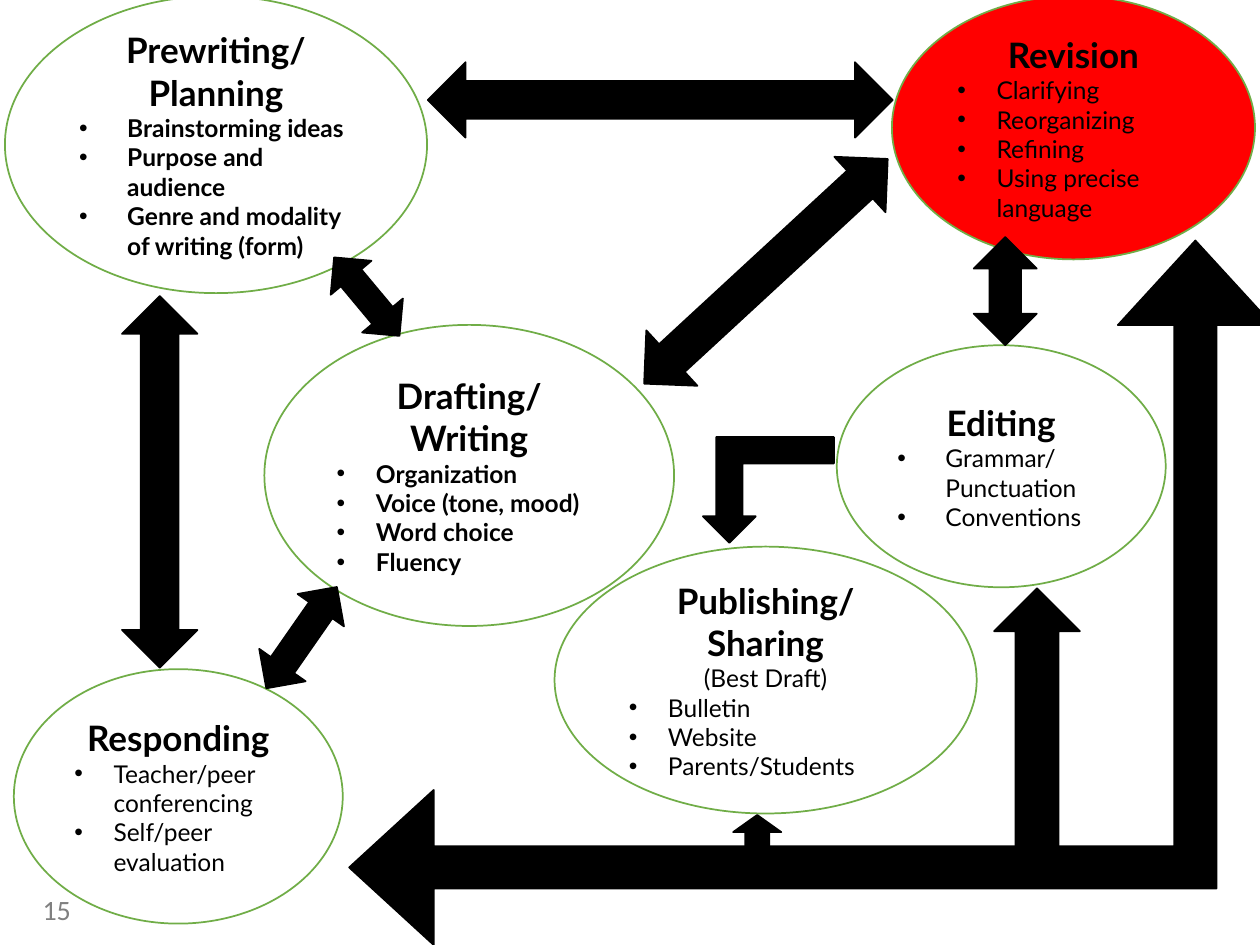
from lxml.etree import SubElement
from pptx import Presentation
from pptx.dml.color import RGBColor
from pptx.enum.shapes import MSO_SHAPE as Shape
from pptx.enum.text import MSO_ANCHOR as Anchor, PP_ALIGN as Align
from pptx.oxml.ns import qn
from pptx.util import Cm, Pt

THEME = {
    "font": "Lato", "number_font": "Calibri",
    "heading": 20, "body": 14, "number": 16, "line": 1,
    "text": "000000", "muted": "808080", "arrow": "000000",
    "plain": "FFFFFF", "current": "FF0000", "outline": "70AD47",
}

# Stages: box in cm, fill, bullet indent in cm, bold body, headings, note, bullets
STAGES = [
    ((0.1, -0.08, 8.51, 5.99), "plain", 0.97, True, ["Prewriting/", "Planning"], [],
     ["Brainstorming ideas", "Purpose and audience",
      "Genre and modality of writing (form)"]),
    ((5.33, 6.55, 8.26, 6.07), "plain", 0.79, True, ["Drafting/", "Writing"], [],
     ["Organization", "Voice (tone, mood)", "Word choice", "Fluency"]),
    ((16.87, 6.96, 6.63, 4.88), "plain", 0.97, False, ["Editing"], [],
     ["Grammar/ Punctuation", "Conventions"]),
    ((0.28, 13.49, 6.63, 5.13), "plain", 0.79, False, ["Responding"], [],
     ["Teacher/peer conferencing", "Self/peer evaluation"]),
    ((17.98, -0.08, 7.32, 5.31), "current", 0.79, False, ["Revision"], [],
     ["Clarifying", "Reorganizing", "Refining", "Using precise language"]),
    ((11.18, 11.02, 8.51, 5.38), "plain", 0.79, False, ["Publishing/ Sharing"],
     ["(Best Draft)"], ["Bulletin", "Website", "Parents/Students"]),
]

# Arrows: preset, box in cm before turning, rotation in degrees, adjustments
HALVES = (0.5, 0.5)
ARROWS = [
    (Shape.UP_DOWN_ARROW, (14.68, 2.13, 1.52, 6.68), 47.3, HALVES),
    (Shape.UP_DOWN_ARROW, (12.55, -2.67, 1.52, 9.37), 90, HALVES),
    (Shape.UP_DOWN_ARROW, (2.46, 5.97, 1.52, 7.49), 0, HALVES),
    (Shape.UP_DOWN_ARROW, (6.86, 4.95, 1.07, 2.06), 320.2, HALVES),
    (Shape.UP_DOWN_ARROW, (5.51, 11.61, 1.14, 2.49), 34.9, HALVES),
    (Shape.UP_DOWN_ARROW, (19.63, 4.78, 1.27, 2.18), 0, HALVES),
    (Shape.LEFT_UP_ARROW, (7.04, 4.85, 18.62, 14.2), 0, (0.06, 0.11, 0.12)),
    (Shape.BENT_UP_ARROW, (14.17, 8.81, 2.64, 2.13), 180, (0.25, 0.25, 0.25)),
    (Shape.UP_ARROW, (20.04, 11.86, 1.73, 5.77), 0, HALVES),
    (Shape.UP_ARROW, (14.78, 16.43, 0.97, 0.69), 0, HALVES),
]

PAGE_NUMBER = ("15", (0.61, 17.86, 5.72, 1.02))


def colour(name):
    return RGBColor.from_string(THEME[name])


def add_shape(page, preset, box, fill, line):
    shape = page.shapes.add_shape(preset, *map(Cm, box))
    shape.shadow.inherit = False
    shape.fill.solid()
    shape.fill.fore_color.rgb = colour(fill)
    shape.line.color.rgb = colour(line)
    shape.line.width = Pt(THEME["line"])
    return shape


def style(para, size, bold=False, font="font", ink="text"):
    for span in para.runs:
        span.font.name = THEME[font]
        span.font.size = Pt(THEME[size])
        span.font.bold = bold
        span.font.color.rgb = colour(ink)


def add_bullet(para, indent):
    props = para._p.get_or_add_pPr()
    props.set("marL", str(Cm(indent)))
    props.set("indent", str(-Cm(indent)))
    ink = SubElement(props, qn("a:buClr"))
    SubElement(ink, qn("a:srgbClr"), val=THEME["text"])
    SubElement(props, qn("a:buFont"), typeface="Arial")
    SubElement(props, qn("a:buChar"), char="•")


def add_stage(page, box, fill, indent, bold, headings, notes, bullets):
    frame = add_shape(page, Shape.OVAL, box, fill, "outline").text_frame
    frame.word_wrap = True
    frame.vertical_anchor = Anchor.MIDDLE
    frame.text = "\n".join(headings + notes + bullets)
    first_bullet = len(headings) + len(notes)
    for index, para in enumerate(frame.paragraphs):
        is_heading = index < len(headings)
        style(para, "heading" if is_heading else "body", is_heading or bold)
        if index < first_bullet:
            para.alignment = Align.CENTER
        else:
            para.alignment = Align.LEFT
            add_bullet(para, indent)


def main():
    deck = Presentation()
    deck.slide_width, deck.slide_height = Cm(25.4), Cm(19.05)
    page = deck.slides.add_slide(deck.slide_layouts[6])

    # Page number
    number, box = PAGE_NUMBER
    frame = page.shapes.add_textbox(*map(Cm, box)).text_frame
    frame.word_wrap = True
    frame.text = number
    style(frame.paragraphs[0], "number", font="number_font", ink="muted")

    # Stages of the writing process
    for stage in STAGES:
        add_stage(page, *stage)

    # Arrows between the stages
    for preset, box, rotation, adjustments in ARROWS:
        arrow = add_shape(page, preset, box, "arrow", "arrow")
        arrow.rotation = rotation
        for index, value in enumerate(adjustments):
            arrow.adjustments[index] = value

    deck.save("out.pptx")


if __name__ == "__main__":
    main()
